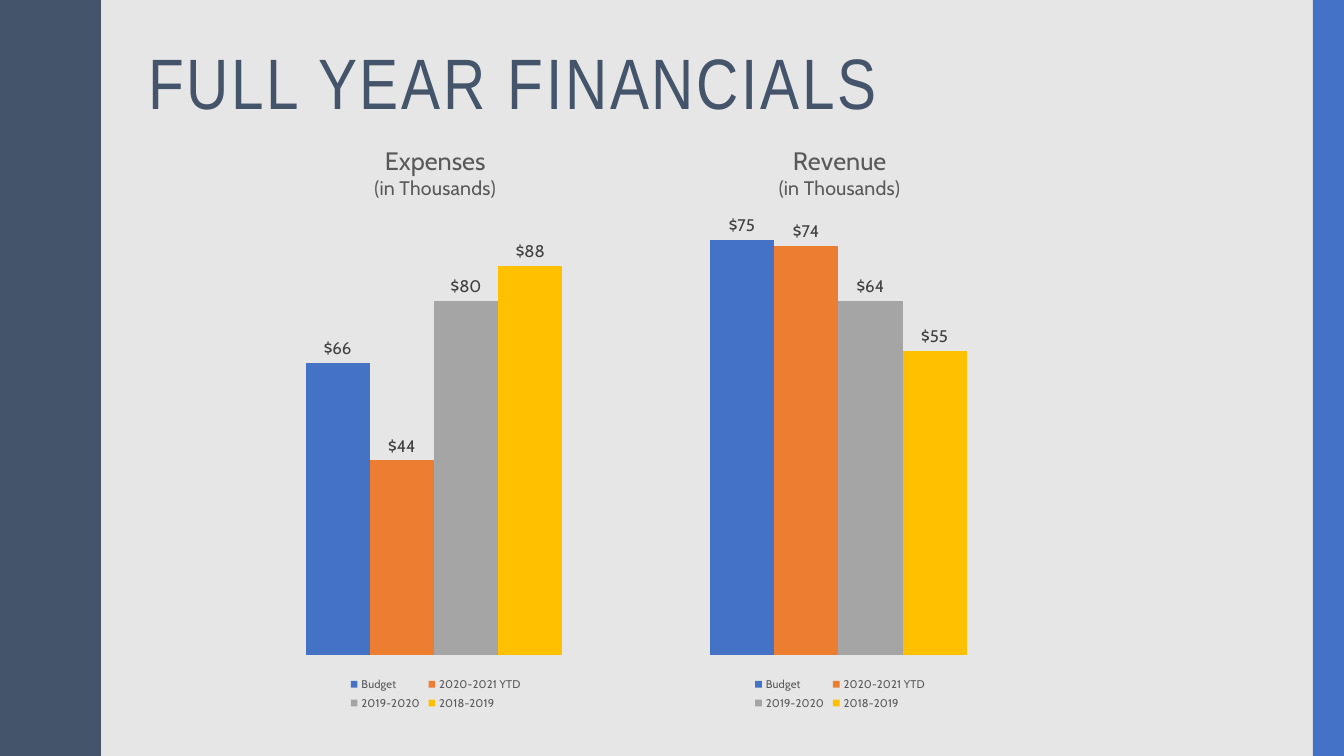
from lxml import etree
from pptx import Presentation
from pptx.chart.data import CategoryChartData
from pptx.dml.color import RGBColor
from pptx.enum.chart import XL_CHART_TYPE, XL_LABEL_POSITION, XL_LEGEND_POSITION
from pptx.enum.shapes import MSO_SHAPE
from pptx.enum.text import MSO_ANCHOR, MSO_AUTO_SIZE, PP_ALIGN
from pptx.oxml.ns import qn
from pptx.util import Inches, Pt

TITLE = "FULL YEAR FINANCIALS"
UNIT = "(in Thousands)"
YEARS = [
    ("Budget", "4472C4"),
    ("2020-2021 YTD", "ED7D31"),
    ("2019-2020", "A5A5A5"),
    ("2018-2019", "FFC000"),
]
# name, left edge, axis maximum, values by year
CHARTS = [
    ("Expenses", 2.48, 100, (66, 44, 80, 88)),
    ("Revenue", 6.49, 80, (75, 74, 64, 55)),
]
DOLLARS = '"$"#,##0'
NAVY, BLUE, PALE, GREY, DARK = "44546A", "4472C4", "E7E6E6", "595959", "404040"

# Left half of one wave: (x, y); the other half mirrors it
PERIOD = 1.5
HALF = [
    (0.78, 0), (0.78, 0.07), (0.79, 0.14), (0.8, 0.2), (0.81, 0.25),
    (0.83, 0.29), (0.85, 0.33), (0.87, 0.38), (0.89, 0.42), (0.91, 0.46),
    (0.93, 0.5), (0.95, 0.55), (0.96, 0.61), (0.97, 0.68), (0.97, 0.75),
]


def color(text):
    return RGBColor.from_string(text)


def style(font, size, tone, face="Cabin"):
    font.size, font.name, font.bold = Pt(size), face, False
    font.color.rgb = color(tone)


def paint(shape, tone):
    shape.fill.solid()
    shape.fill.fore_color.rgb = color(tone)
    shape.line.fill.background()
    shape.shadow.inherit = False


def place(part, index, inner=False, **box):
    """Give a chart part a fixed layout, in fractions of the chart."""
    for old in part.findall(qn("c:layout")):
        part.remove(old)
    layout = etree.Element(qn("c:layout"))
    part.insert(index, layout)
    manual = etree.SubElement(layout, qn("c:manualLayout"))
    rules = [("layoutTarget", "inner")] if inner else []
    rules += [("xMode", "edge"), ("yMode", "edge"), *box.items()]
    for tag, value in rules:
        etree.SubElement(manual, qn(f"c:{tag}")).set("val", str(value))


def add_wave(slide, height):
    wave = HALF + [(x, PERIOD - y) for x, y in HALF[-2::-1]]
    edge = [(x, y + n * PERIOD)
            for n in range(round(height / PERIOD)) for x, y in wave]
    build = slide.shapes.build_freeform(0, 0, scale=Inches(1))
    build.add_line_segments(edge + [(0, height)], close=True)
    paint(build.convert_to_shape(), NAVY)


def add_bars(slide, name, left, top, values):
    data = CategoryChartData(number_format=DOLLARS)
    data.categories = ["1"]
    for (year, _), value in zip(YEARS, values):
        data.add_series(year, [value])
    chart = slide.shapes.add_chart(
        XL_CHART_TYPE.COLUMN_CLUSTERED, Inches(left), Inches(1.16),
        Inches(3.65), Inches(5.93), data).chart
    style(chart.font, 10, "000000")

    chart.has_title = True
    frame = chart.chart_title.text_frame
    for n, (text, size) in enumerate([(name, 18), (UNIT, 14)]):
        para = frame.add_paragraph() if n else frame.paragraphs[0]
        run = para.add_run()
        run.text = text
        style(run.font, size, GREY)
    chart.chart_title.include_in_layout = False

    chart.has_legend = True
    chart.legend.position = XL_LEGEND_POSITION.BOTTOM
    chart.legend.include_in_layout = False
    style(chart.legend.font, 8, GREY)

    axis = chart.value_axis
    axis.minimum_scale, axis.maximum_scale = 0, top
    axis.has_major_gridlines = False
    axis.visible = chart.category_axis.visible = False

    plot = chart.plots[0]
    plot.gap_width, plot.overlap, plot.vary_by_categories = 150, 0, False
    for series, (_, tone) in zip(plot.series, YEARS):
        series.format.fill.solid()
        series.format.fill.fore_color.rgb = color(tone)
        labels = series.data_labels
        labels.show_value = True
        labels.position = XL_LABEL_POSITION.OUTSIDE_END
        labels.number_format = DOLLARS
        labels.number_format_is_linked = False
        style(labels.font, 12, DARK)

    title, area, legend = (
        chart.element.find(f".//{qn(tag)}")
        for tag in ("c:title", "c:plotArea", "c:legend"))
    place(title, 1, x=0.33, y=0.04)
    place(area, 0, inner=True, x=0.02, y=0.16, w=0.96, h=0.74)
    place(legend, 1, x=0.26, y=0.93, w=0.49, h=0.07)


def main():
    deck = Presentation()
    deck.slide_width, deck.slide_height = Inches(13.33), Inches(7.5)
    slide = deck.slides.add_slide(deck.slide_layouts[5])
    slide.background.fill.solid()
    slide.background.fill.fore_color.rgb = color(PALE)

    add_wave(slide, 7.5)
    band = slide.shapes.add_shape(
        MSO_SHAPE.RECTANGLE, Inches(13.02), 0, Inches(0.31), Inches(7.5))
    paint(band, BLUE)

    title = slide.shapes.title
    title.left, title.top = Inches(1.37), Inches(0.42)
    title.width, title.height = Inches(11.13), Inches(1.63)
    frame = title.text_frame
    frame.auto_size, frame.word_wrap = MSO_AUTO_SIZE.NONE, True
    frame.vertical_anchor = MSO_ANCHOR.TOP
    para = frame.paragraphs[0]
    para.alignment, para.line_spacing = PP_ALIGN.LEFT, 0.9
    run = para.add_run()
    run.text = TITLE
    style(run.font, 51, NAVY, "Arial Narrow")
    run.font._element.set("spc", "200")

    for name, left, top, values in CHARTS:
        add_bars(slide, name, left, top, values)
    deck.save("out.pptx")


if __name__ == "__main__":
    main()
